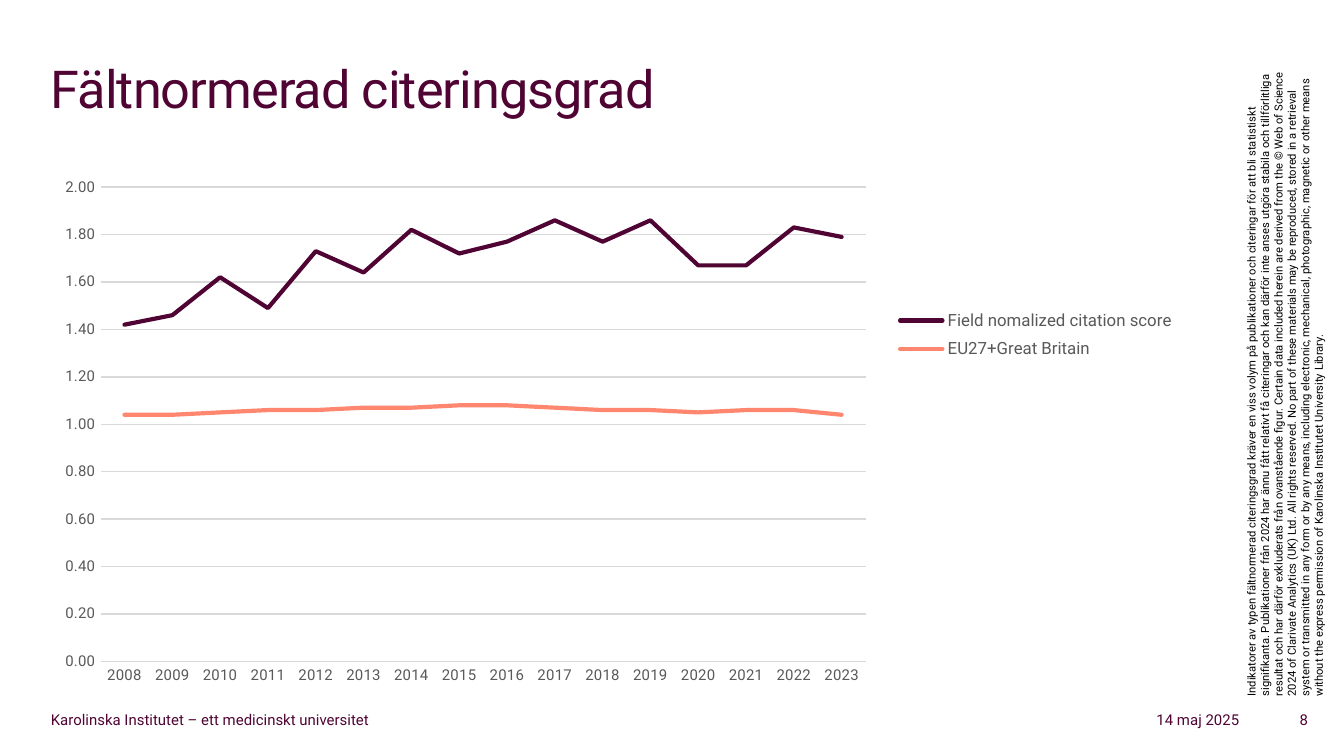
"""Build the slide with the field-normalised citation chart."""
import pptx
import pptx.chart.data
import pptx.dml.color
import pptx.enum.chart
import pptx.enum.text
import pptx.oxml
import pptx.oxml.ns
import pptx.util

Inches = pptx.util.Inches
Pt = pptx.util.Pt
ALIGN = pptx.enum.text.PP_ALIGN

THEME = {
    "font": "Roboto",
    "plum": "4F0433", "coral": "FF876F", "black": "000000",
    "label": "595959", "grid": "D9D9D9",
    "title": 28, "footer": 8, "chart": 10, "axis": 8, "legend": 9, "note": 6,
    "series_line": 2.25, "grid_line": 0.75,
}

TITLE = "Fältnormerad citeringsgrad"
FOOTERS = [
    ("Karolinska Institutet – ett medicinskt universitet", 0.28, 3.07, ALIGN.LEFT),
    ("14 maj 2025", 7.24, 2.08, ALIGN.RIGHT),
    ("8", 9.08, 0.75, ALIGN.RIGHT),
]
NOTE = (
    "Indikatorer av typen fältnormerad citeringsgrad kräver en viss volym på publikationer "
    "och citeringar för att bli statistiskt signifikanta. Publikationer från 2024 har ännu "
    "fått relativt få citeringar och kan därför inte anses utgöra stabila och tillförlitliga "
    "resultat och har därför exkluderats från ovanstående figur. Certain data included herein "
    "are derived from the © Web of Science 2024 of Clarivate Analytics (UK) Ltd. All rights "
    "reserved. No part of these materials may be reproduced, stored in a retrieval system or "
    "transmitted in any form or by any means, including electronic, mechanical, photographic, "
    "magnetic or other means without the express permission of Karolinska Institutet "
    "University Library."
)
YEARS = [str(year) for year in range(2008, 2024)]
SERIES = [
    ("Field nomalized citation score", "plum",
     [1.42, 1.46, 1.62, 1.49, 1.73, 1.64, 1.82, 1.72,
      1.77, 1.86, 1.77, 1.86, 1.67, 1.67, 1.83, 1.79]),
    ("EU27+Great Britain", "coral",
     [1.04, 1.04, 1.05, 1.06, 1.06, 1.07, 1.07, 1.08,
      1.08, 1.07, 1.06, 1.06, 1.05, 1.06, 1.06, 1.04]),
]
PLOT_PERCENT = {"x": 5.4, "y": 3.8, "w": 61.6, "h": 87.8}
LEGEND_PERCENT = {"x": 67.7, "y": 25, "w": 26, "h": 12.3}


def color(name):
    """Return a theme colour."""
    return pptx.dml.color.RGBColor.from_string(THEME[name])


def set_font(font, size, color_name):
    """Apply the theme typeface, size and colour to a font."""
    font.name = THEME["font"]
    font.size = Pt(THEME[size])
    font.bold = False
    font.color.rgb = color(color_name)


def set_line(line, color_name, width):
    """Apply a theme colour and width to a line."""
    line.color.rgb = color(color_name)
    line.width = Pt(THEME[width])


def add_text(slide, text, at, *, size, color_name="plum", align=ALIGN.LEFT,
             rotation=0, spacing=None):
    """Add one formatted text box."""
    shape = slide.shapes.add_textbox(*map(Inches, at))
    shape.rotation = rotation
    frame = shape.text_frame
    frame.word_wrap = True
    frame.vertical_anchor = pptx.enum.text.MSO_ANCHOR.TOP
    paragraph = frame.paragraphs[0]
    paragraph.alignment = align
    run = paragraph.add_run()
    run.text = text
    set_font(run.font, size, color_name)
    if spacing is not None:
        run._r.get_or_add_rPr().set("spc", str(round(spacing * 100)))


def set_layout(element, before, percent, inner=False):
    """Place a chart part by percentages of the chart area."""
    for old in element.findall(pptx.oxml.ns.qn("c:layout")):
        element.remove(old)
    parts = '<c:layoutTarget val="inner"/>' if inner else ""
    parts += '<c:xMode val="edge"/><c:yMode val="edge"/>'
    parts += "".join(f'<c:{key} val="{value / 100:.3f}"/>' for key, value in percent.items())
    layout = pptx.oxml.parse_xml(
        f'<c:layout {pptx.oxml.ns.nsdecls("c")}>'
        f"<c:manualLayout>{parts}</c:manualLayout></c:layout>")
    element.find(pptx.oxml.ns.qn(before)).addprevious(layout)


def add_citation_chart(slide):
    """Add the line chart of citation scores by year."""
    data = pptx.chart.data.CategoryChartData(number_format="0.00")
    data.categories = YEARS
    for name, _, values in SERIES:
        data.add_series(name, values)
    kinds = pptx.enum.chart
    chart = slide.shapes.add_chart(
        kinds.XL_CHART_TYPE.LINE, *map(Inches, (0.25, 1.24, 9.24, 4.02)), data).chart
    set_font(chart.font, "chart", "black")
    chart.has_title = False
    plot = chart.plots[0]
    plot.vary_by_categories = False
    for series, (_, color_name, _) in zip(plot.series, SERIES):
        series.smooth = False
        series.marker.style = kinds.XL_MARKER_STYLE.NONE
        set_line(series.format.line, color_name, "series_line")
        series.format.line._ln.set("cap", "rnd")

    for axis in (chart.category_axis, chart.value_axis):
        axis.major_tick_mark = axis.minor_tick_mark = kinds.XL_TICK_MARK.NONE
        set_font(axis.tick_labels.font, "axis", "label")
    set_line(chart.category_axis.format.line, "grid", "grid_line")
    value_axis = chart.value_axis
    value_axis.minimum_scale, value_axis.maximum_scale, value_axis.major_unit = 0, 2, 0.2
    value_axis.tick_labels.number_format = "0.00"
    value_axis.tick_labels.number_format_is_linked = False
    value_axis.format.line.fill.background()
    set_line(value_axis.major_gridlines.format.line, "grid", "grid_line")

    chart.has_legend = True
    chart.legend.position = kinds.XL_LEGEND_POSITION.RIGHT
    chart.legend.include_in_layout = False
    set_font(chart.legend.font, "legend", "label")
    set_layout(chart.legend._element, "c:overlay", LEGEND_PERCENT)
    set_layout(chart._chartSpace.chart.plotArea, "c:lineChart", PLOT_PERCENT, inner=True)


def main():
    """Build and save the presentation."""
    presentation = pptx.Presentation()
    presentation.slide_width = Inches(10)
    presentation.slide_height = presentation.slide_width * 9 // 16
    slide = presentation.slides.add_slide(presentation.slide_layouts[6])
    add_text(slide, TITLE, (0.28, 0.37, 9.44, 0.94), size="title", spacing=-0.5)
    for text, left, width, align in FOOTERS:
        add_text(slide, text, (left, 5.24, width, 0.19), size="footer", align=align)
    add_citation_chart(slide)
    add_text(slide, NOTE, (6.84, 2.66, 4.99, 0.25), size="note",
             color_name="black", rotation=270)
    presentation.save("out.pptx")


if __name__ == "__main__":
    main()
